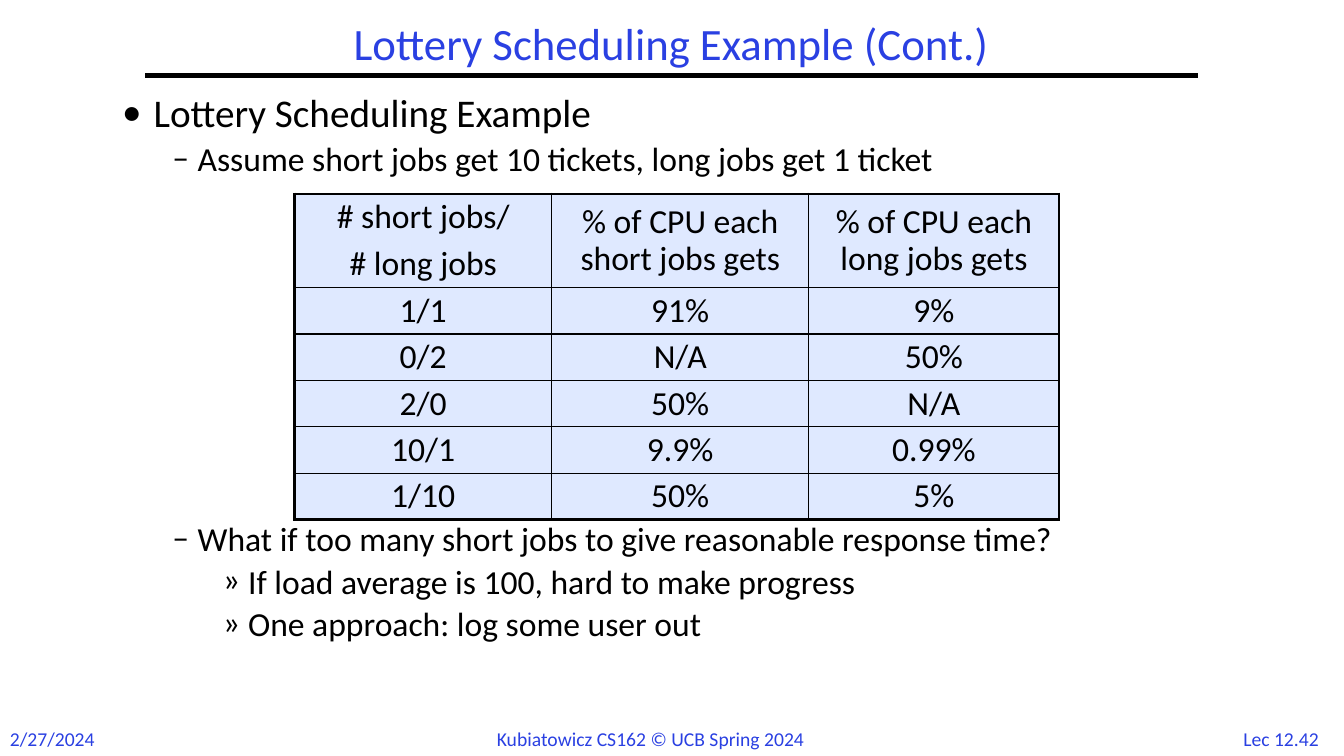
from lxml import etree
from pptx import Presentation
from pptx.dml.color import RGBColor
from pptx.enum.shapes import MSO_CONNECTOR
from pptx.enum.text import MSO_ANCHOR, MSO_AUTO_SIZE, PP_ALIGN
from pptx.oxml.ns import qn
from pptx.util import Pt

BLUE = RGBColor(0x2A, 0x40, 0xE2)
BLACK = RGBColor(0x00, 0x00, 0x00)
PALE_BLUE = RGBColor(0xDF, 0xE9, 0xFF)
LEFT, CENTER = PP_ALIGN.LEFT, PP_ALIGN.CENTER
MIDDLE, TOP = MSO_ANCHOR.MIDDLE, MSO_ANCHOR.TOP
NO_AUTOFIT, GROW = MSO_AUTO_SIZE.NONE, MSO_AUTO_SIZE.SHAPE_TO_FIT_TEXT
STRAIGHT = MSO_CONNECTOR.STRAIGHT
FONT = "Calibri"


def format_paragraph(paragraph, size, color, **layout):
    for name, value in {"name": FONT, "size": Pt(size)}.items():
        setattr(paragraph.font, name, value)
    paragraph.font.color.rgb = color
    for name, value in layout.items():
        setattr(paragraph, name, value)


def place(shape, left, top, width, height):
    box = {"left": left, "top": top, "width": width, "height": height}
    for name, value in box.items():
        setattr(shape, name, Pt(value))


presentation = Presentation()
presentation.slide_width, presentation.slide_height = Pt(960), Pt(540)
slide = presentation.slides.add_slide(presentation.slide_layouts[1])

# Footer
footers = [
    ("2/27/2024", 0, 77, LEFT),
    ("Kubiatowicz CS162 © UCB Spring 2024", 347.8, 265, LEFT),
    ("Lec 12.42", 876.2, 77.8, CENTER),
]
for text, left, width, alignment in footers:
    footer = slide.shapes.add_textbox(Pt(left), Pt(515.5), Pt(width), Pt(24.2))
    footer.text_frame.word_wrap = False
    footer.text_frame.auto_size = GROW
    footer.text_frame.text = text
    format_paragraph(footer.text_frame.paragraphs[0], 14, BLUE, alignment=alignment)

# Title and rule
title = slide.shapes.title
place(title, 103.7, 12.2, 751.7, 41.8)
title.text_frame.text = "Lottery Scheduling Example (Cont.)"
title.text_frame.vertical_anchor = MIDDLE
title.text_frame.auto_size = NO_AUTOFIT
format_paragraph(title.text_frame.paragraphs[0], 32, BLUE, alignment=CENTER, line_spacing=0.9)

rule = slide.shapes.add_connector(STRAIGHT, Pt(103.7), Pt(54), Pt(856), Pt(54))
rule.line.color.rgb = BLACK
rule.line.width = Pt(3)
etree.SubElement(rule.element.spPr, qn("a:effectLst"))

# Bullets: text, level, space before (the fourth column leaves room for the table)
bullets = [
    ("Lottery Scheduling Example", 0, 0),
    ("Assume short jobs get 10 tickets, long jobs get 1 ticket", 1, 7.2),
    ("What if too many short jobs to give reasonable response time?", 1, 248.7),
    ("If load average is 100, hard to make progress", 2, 7.2),
    ("One approach: log some user out", 2, 7.2),
]
# Per level: bullet, size, margin, hanging indent
levels = [("•", 28, 22.5, 22.5), ("–", 24, 54, 18), ("»", 24, 90, 18)]

body = slide.placeholders[1]
place(body, 80, 66.2, 820, 444.2)
body.text_frame.vertical_anchor = TOP
body.text_frame.auto_size = NO_AUTOFIT
body.text_frame.text = "\n".join(text for text, level, space in bullets)
for paragraph, (text, level, space) in zip(body.text_frame.paragraphs, bullets):
    character, size, margin, hanging = levels[level]
    format_paragraph(paragraph, size, BLACK, level=level, alignment=LEFT,
                     line_spacing=0.8, space_before=Pt(space))
    properties = paragraph._p.get_or_add_pPr()
    properties.set("marL", str(Pt(margin)))
    properties.set("indent", str(-Pt(hanging)))
    bullet_font = etree.SubElement(properties, qn("a:buFont"))
    bullet_font.set("typeface", FONT)
    etree.SubElement(properties, qn("a:buChar")).set("char", character)
    # Paragraph defaults follow the bullet in the schema order
    properties.append(properties.find(qn("a:defRPr")))
    for run in paragraph.runs:
        run.font.name, run.font.size = FONT, Pt(size)
        run.font.color.rgb = BLACK

# Table
rows = [
    ("# short jobs/\n# long jobs", "% of CPU each short jobs gets", "% of CPU each long jobs gets"),
    ("1/1", "91%", "9%"),
    ("0/2", "N/A", "50%"),
    ("2/0", "50%", "N/A"),
    ("10/1", "9.9%", "0.99%"),
    ("1/10", "50%", "5%"),
]
last_row, last_column = len(rows) - 1, len(rows[0]) - 1
frame = slide.shapes.add_table(len(rows), len(rows[0]), Pt(210.5), Pt(138.5), Pt(546), Pt(232))
table = frame.table
table.first_row = table.horz_banding = False
for column, width in zip(table.columns, (183.6, 183.6, 178.8)):
    column.width = Pt(width)
for index, row in enumerate(table.rows):
    row.height = Pt(33 if index else 67)

for row_index, row in enumerate(rows):
    for column_index, text in enumerate(row):
        cell = table.cell(row_index, column_index)
        cell.text = text
        cell.vertical_anchor = MIDDLE
        for paragraph in cell.text_frame.paragraphs:
            format_paragraph(paragraph, 24, BLACK, alignment=CENTER,
                             line_spacing=0.9, space_before=Pt(7.2))
        # Thick outer frame, thin inner lines
        outer = {
            "a:lnL": column_index == 0,
            "a:lnR": column_index == last_column,
            "a:lnT": row_index == 0,
            "a:lnB": row_index == last_row,
        }
        cell_properties = cell._tc.get_or_add_tcPr()
        for side, is_outer in outer.items():
            border = etree.SubElement(cell_properties, qn(side))
            border.set("w", str(Pt(2.25 if is_outer else 1)))
            border_fill = etree.SubElement(border, qn("a:solidFill"))
            etree.SubElement(border_fill, qn("a:srgbClr")).set("val", str(BLACK))
        cell.fill.solid()
        cell.fill.fore_color.rgb = PALE_BLUE

presentation.save("out.pptx")
